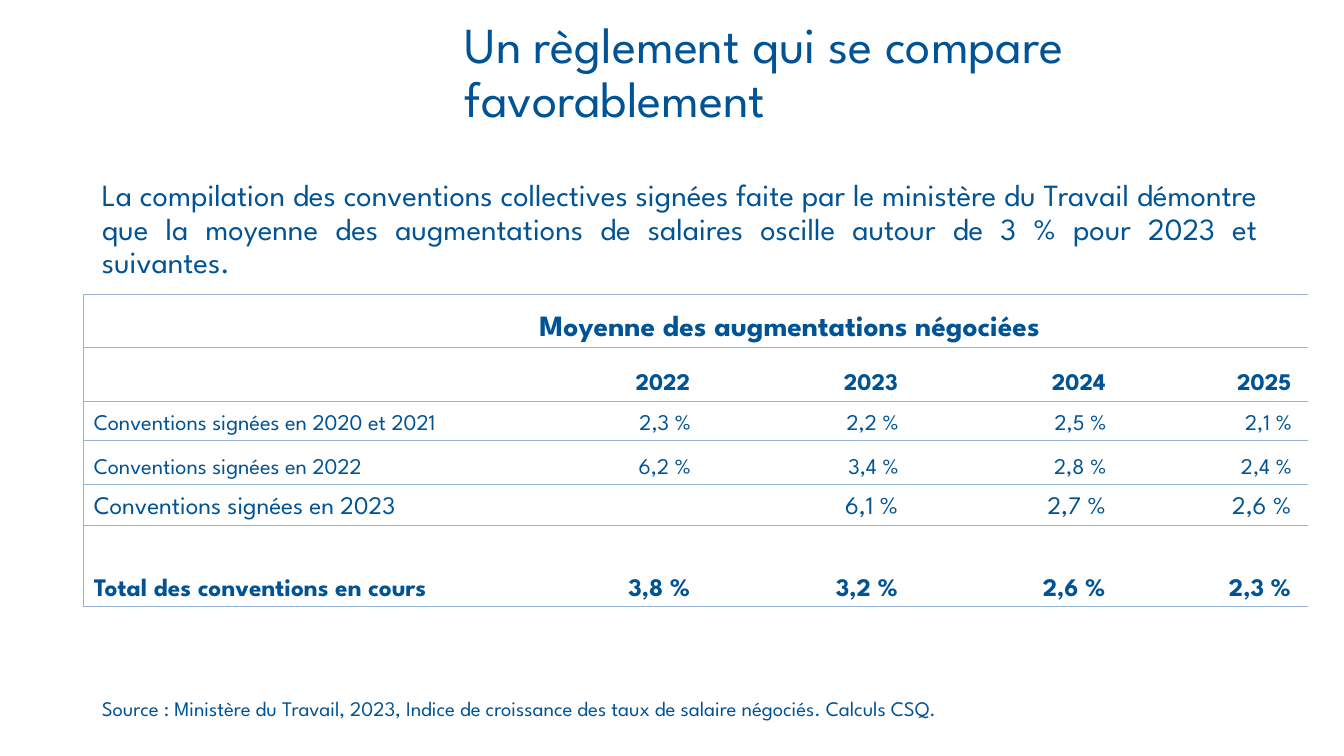
from lxml import etree
from pptx import Presentation
from pptx.dml.color import RGBColor
from pptx.enum.text import MSO_ANCHOR, PP_ALIGN
from pptx.oxml.ns import qn
from pptx.util import Inches, Pt

LEFT, RIGHT, JUSTIFY = PP_ALIGN.LEFT, PP_ALIGN.RIGHT, PP_ALIGN.JUSTIFY
TOP, MIDDLE, BOTTOM = MSO_ANCHOR.TOP, MSO_ANCHOR.MIDDLE, MSO_ANCHOR.BOTTOM
BLUE = RGBColor(0x00, 0x53, 0x95)
RULE_BLUE = RGBColor(0x95, 0xB3, 0xD7)
FONT = "League Spartan"
NBSP = " "

TEXTS = [
    ("Un règlement qui se compare favorablement",
     (4.5, 0.14, 8.71, 1.19), 36, LEFT, MIDDLE, 0.9),
    ("La compilation des conventions collectives signées faite par le ministère du Travail "
     "démontre que la moyenne des augmentations de salaires oscille autour de 3 % pour 2023 "
     "et suivantes.",
     (0.9, 1.74, 11.68, 1.1), 22, JUSTIFY, TOP, 0.9),
    ("Source : Ministère du Travail, 2023, Indice de croissance des taux de salaire négociés. "
     "Calculs CSQ.",
     (0.9, 6.85, 12.4, 0.36), 14.8, LEFT, TOP, 1.0),
]

TABLE_LEFT, TABLE_TOP = 0.83, 2.92
COLUMN_WIDTHS = [4.42, 1.76, 2.06, 2.06, 1.84]
ROWS = [
    (0.53, 21, True, ["", "Moyenne des augmentations négociées", "", "", ""]),
    (0.53, 17, True, ["", "2022", "2023", "2024", "2025"]),
    (0.39, 16, False, ["Conventions signées en 2020 et 2021", "2,3 %", "2,2 %", "2,5 %", "2,1 %"]),
    (0.44, 16, False, ["Conventions signées en 2022", "6,2 %", "3,4 %", "2,8 %", "2,4 %"]),
    (0.34, 18, False, ["Conventions signées en 2023", "", "6,1 %", "2,7 %", "2,6 %"]),
    (0.81, 18, True, ["Total des conventions en cours", "3,8 %", "3,2 %", "2,6 %", "2,3 %"]),
]


def write(para, text, size, align, bold=False):
    para.text = text
    para.alignment = align
    for span in para.runs:
        span.font.name = FONT
        span.font.size = Pt(size)
        span.font.bold = bold
        span.font.color.rgb = BLUE


def set_margins(target, side, edge):
    target.margin_left = target.margin_right = Inches(side)
    target.margin_top = target.margin_bottom = Inches(edge)


def set_borders(cell, visible):
    properties = cell._tc.get_or_add_tcPr()
    for position, tag in enumerate(("a:lnL", "a:lnR", "a:lnT", "a:lnB")):
        line = etree.Element(qn(tag), w=str(Pt(0.75)))
        if tag in visible:
            fill = etree.SubElement(line, qn("a:solidFill"))
            etree.SubElement(fill, qn("a:srgbClr"), val=str(RULE_BLUE))
        else:
            etree.SubElement(line, qn("a:noFill"))
        properties.insert(position, line)


def add_text(page, text, place, size, align, anchor, spacing):
    box = page.shapes.add_textbox(*map(Inches, place))
    frame = box.text_frame
    frame.word_wrap = True
    frame.vertical_anchor = anchor
    set_margins(frame, 0.11, 0.05)
    write(frame.paragraphs[0], text, size, align)
    frame.paragraphs[0].line_spacing = spacing


def add_raise_table(page):
    heights = [row[0] for row in ROWS]
    frame = page.shapes.add_table(
        len(ROWS), len(COLUMN_WIDTHS), Inches(TABLE_LEFT), Inches(TABLE_TOP),
        Inches(sum(COLUMN_WIDTHS)), Inches(sum(heights)))
    table = frame.table
    table.first_row = table.horz_banding = False
    for column, width in zip(table.columns, COLUMN_WIDTHS):
        column.width = Inches(width)
    for r, (height, size, bold, values) in enumerate(ROWS):
        table.rows[r].height = Inches(height)
        for c, value in enumerate(values):
            cell = table.cell(r, c)
            cell.fill.background()
            set_borders(cell, ("a:lnT", "a:lnB") + (("a:lnL",) if c == 0 else ()))
            cell.vertical_anchor = BOTTOM
            set_margins(cell, 0.1, 0.05 if value else 0)
            if value:
                align = LEFT if r == 0 or c == 0 else RIGHT
                text = value if r == 0 else value + NBSP
                write(cell.text_frame.paragraphs[0], text, size, align, bold)
    table.cell(0, 1).merge(table.cell(0, len(COLUMN_WIDTHS) - 1))


def main():
    deck = Presentation()
    deck.slide_width, deck.slide_height = Inches(13.33), Inches(7.5)
    page = deck.slides.add_slide(deck.slide_layouts[6])
    for item in TEXTS:
        add_text(page, *item)
    add_raise_table(page)
    deck.save("out.pptx")


if __name__ == "__main__":
    main()
